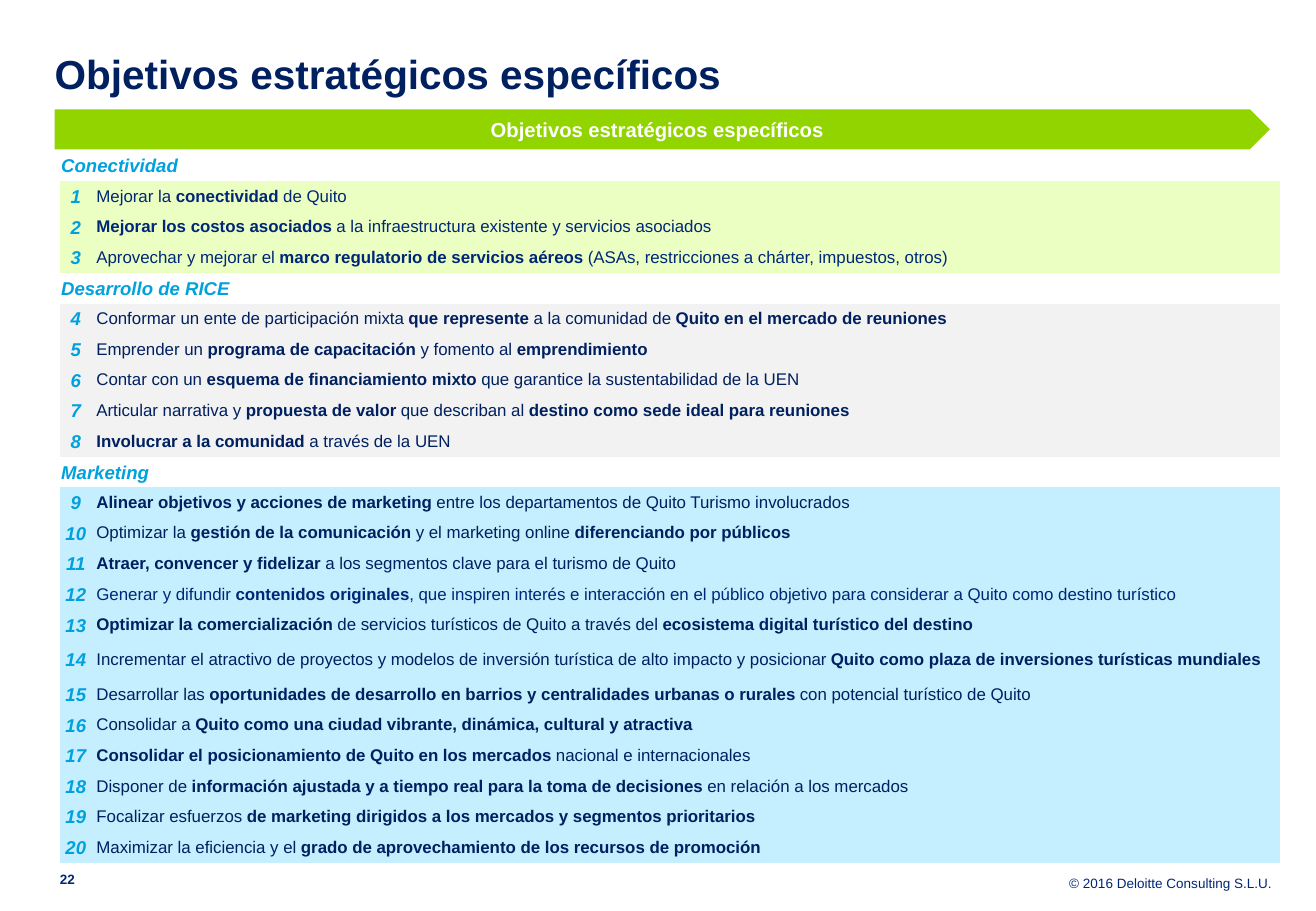
"""Build the slide listing the specific strategic objectives by area."""
import pptx
import pptx.dml.color
import pptx.enum.shapes
import pptx.enum.text
import pptx.util

RGBColor = pptx.dml.color.RGBColor
Align = pptx.enum.text.PP_ALIGN
Anchor = pptx.enum.text.MSO_ANCHOR

NAVY = RGBColor(0x00, 0x20, 0x60)
ROYAL = RGBColor(0x00, 0x27, 0x76)
SKY = RGBColor(0x00, 0xA1, 0xDE)
LIME = RGBColor(0x92, 0xD4, 0x00)
WHITE = RGBColor(0xFF, 0xFF, 0xFF)
PALE_LIME = RGBColor(0xEC, 0xFF, 0xC3)
PALE_GREY = RGBColor(0xF2, 0xF2, 0xF2)
PALE_SKY = RGBColor(0xC5, 0xEF, 0xFF)

HEADING = "Objetivos estratégicos específicos"
COPYRIGHT = "© 2016 Deloitte Consulting S.L.U."
PAGE = "22"
AREAS = [
    ("Conectividad", PALE_LIME, [
        "Mejorar la **conectividad** de Quito",
        "**Mejorar los costos asociados **a la infraestructura existente y servicios asociados",
        "Aprovechar y mejorar el **marco regulatorio de servicios aéreos **"
        "(ASAs, restricciones a chárter, impuestos, otros)",
    ]),
    ("Desarrollo de RICE", PALE_GREY, [
        "Conformar un ente de participación mixta **que represente **a la comunidad de "
        "**Quito en el mercado de reuniones**",
        "Emprender un **programa de capacitación **y fomento al **emprendimiento**",
        "Contar con un **esquema de financiamiento mixto **que garantice la sustentabilidad de la UEN",
        "Articular narrativa y **propuesta de valor **que describan al "
        "**destino como sede ideal para reuniones**",
        "**Involucrar a la comunidad **a través de la UEN",
    ]),
    ("Marketing", PALE_SKY, [
        "**Alinear objetivos y acciones de marketing **entre los departamentos de Quito Turismo involucrados",
        "Optimizar la **gestión de la comunicación **y el marketing online **diferenciando por públicos**",
        "**Atraer, convencer y fidelizar **a los segmentos clave para el turismo de Quito",
        "Generar y difundir **contenidos originales**, que inspiren interés e interacción en el "
        "público objetivo para considerar a Quito como destino turístico",
        "**Optimizar la comercialización **de servicios turísticos de Quito a través del "
        "**ecosistema digital turístico del destino**",
        "Incrementar el atractivo de proyectos y modelos de inversión turística de alto impacto y "
        "posicionar **Quito como plaza de inversiones turísticas mundiales**",
        "Desarrollar las **oportunidades de desarrollo en barrios y centralidades urbanas o rurales **"
        "con potencial turístico de Quito",
        "Consolidar a **Quito como una ciudad vibrante, dinámica, cultural y atractiva**",
        "**Consolidar el posicionamiento de Quito en los mercados **nacional e internacionales",
        "Disponer de **información ajustada y a tiempo real para la toma de decisiones **"
        "en relación a los mercados",
        "Focalizar esfuerzos **de marketing dirigidos a los mercados y segmentos prioritarios**",
        "Maximizar la eficiencia y el **grado de aprovechamiento de los recursos de promoción**",
    ]),
]
ROYAL_OBJECTIVES = {1, 2, 3, 12}
TALL_OBJECTIVE = 14

TITLE_SHARES = (4.16, 5.33, 93.07, 9.2)
BANNER_SHARES = (4.16, 12, 92.34, 4.4)
TABLE_SHARES = (4.56, 16.53, 92.71, 78.27)
PAGE_SHARES = (4.56, 95.4, 3.14, 2.13)
COPYRIGHT_SHARES = (78.67, 96.2, 18.01, 1.6)
NUMBER_WIDTH = 2.4
TALL_HEIGHT = 4.27

LABEL_INSETS = (0.01, 0.01, 0.01, 0)
OBJECTIVE_INSETS = (0.04, 0, 0.04, 0)
NO_INSETS = (0, 0, 0, 0)
LABEL_STYLE = {"size": 11, "color": SKY, "bold": True, "italic": True}
PLAIN_TABLE = "{2D5ABB26-0587-4C30-8999-92F81FD0307C}"

deck = pptx.Presentation()
deck.slide_width = pptx.util.Inches(10.83)
deck.slide_height = pptx.util.Inches(7.5)
slide = deck.slides.add_slide(deck.slide_layouts[5])


def across(share):
    return round(deck.slide_width * share / 100)


def down(share):
    return round(deck.slide_height * share / 100)


def place(shares):
    left, top, width, height = shares
    return across(left), down(top), across(width), down(height)


def write(frame, text, size, color, bold=False, italic=False, align=Align.LEFT):
    """Write text in which ** switches bold on and off."""
    paragraph = frame.paragraphs[0]
    paragraph.alignment = align
    for index, part in enumerate(text.split("**")):
        if part:
            run = paragraph.add_run()
            run.text = part
            run.font.name = "Arial"
            run.font.size = pptx.util.Pt(size)
            run.font.bold = bold or index % 2 == 1
            run.font.italic = italic
            run.font.color.rgb = color
    return paragraph


def set_insets(holder, insets):
    holder.margin_left, holder.margin_top, holder.margin_right, holder.margin_bottom = map(
        pptx.util.Inches, insets)


def prepare(frame, anchor):
    set_insets(frame, NO_INSETS)
    frame.word_wrap = True
    frame.auto_size = pptx.enum.text.MSO_AUTO_SIZE.NONE
    frame.vertical_anchor = anchor
    return frame


def fill_cell(cell, text, insets, tint=None, **style):
    set_insets(cell, insets)
    cell.vertical_anchor = Anchor.MIDDLE
    if tint is None:
        cell.fill.background()
    else:
        cell.fill.solid()
        cell.fill.fore_color.rgb = tint
    write(cell.text_frame, text, **style)


def add_area_row(row, area):
    area_cell, covered_cell = row.cells
    area_cell.merge(covered_cell)
    fill_cell(area_cell, area, LABEL_INSETS, **LABEL_STYLE)


def add_objective_row(row, number, objective, tint):
    if number == TALL_OBJECTIVE:
        row.height = down(TALL_HEIGHT)
    number_cell, objective_cell = row.cells
    fill_cell(number_cell, str(number), LABEL_INSETS, tint, align=Align.CENTER, **LABEL_STYLE)
    fill_cell(objective_cell, objective, OBJECTIVE_INSETS, tint, size=10,
              color=ROYAL if number in ROYAL_OBJECTIVES else NAVY)


def add_objectives():
    row_count = sum(1 + len(objectives) for _, _, objectives in AREAS)
    table = slide.shapes.add_table(row_count, 2, *place(TABLE_SHARES)).table
    table.first_row = table.horz_banding = False
    table._tbl.tblPr[0].text = PLAIN_TABLE
    table_width, table_height = TABLE_SHARES[2:]
    table.columns[0].width = across(NUMBER_WIDTH)
    table.columns[1].width = across(table_width - NUMBER_WIDTH)
    for row in table.rows:
        row.height = down((table_height - TALL_HEIGHT) / (row_count - 1))

    rows = iter(table.rows)
    number = 0
    for area, tint, objectives in AREAS:
        add_area_row(next(rows), area)
        for number, objective in enumerate(objectives, start=number + 1):
            add_objective_row(next(rows), number, objective, tint)


def add_banner():
    banner = slide.shapes.add_shape(pptx.enum.shapes.MSO_SHAPE.PENTAGON, *place(BANNER_SHARES))
    banner.shadow.inherit = False
    banner.fill.solid()
    banner.fill.fore_color.rgb = LIME
    banner.line.fill.background()
    banner.text_frame.vertical_anchor = Anchor.MIDDLE
    write(banner.text_frame, HEADING, 12, WHITE, bold=True, align=Align.CENTER)


copyright_line = slide.shapes.add_textbox(*place(COPYRIGHT_SHARES))
write(prepare(copyright_line.text_frame, Anchor.BOTTOM), COPYRIGHT, 8, ROYAL, align=Align.RIGHT)

title = slide.shapes.title
title.left, title.top, title.width, title.height = place(TITLE_SHARES)
write(prepare(title.text_frame, Anchor.TOP), HEADING, 24, NAVY, bold=True)

page_number = slide.shapes.add_textbox(*place(PAGE_SHARES))
page_line = write(prepare(page_number.text_frame, Anchor.TOP), PAGE, 8, ROYAL, bold=True)
page_line.line_spacing = pptx.util.Pt(10.6)

add_objectives()
add_banner()
deck.save("out.pptx")
